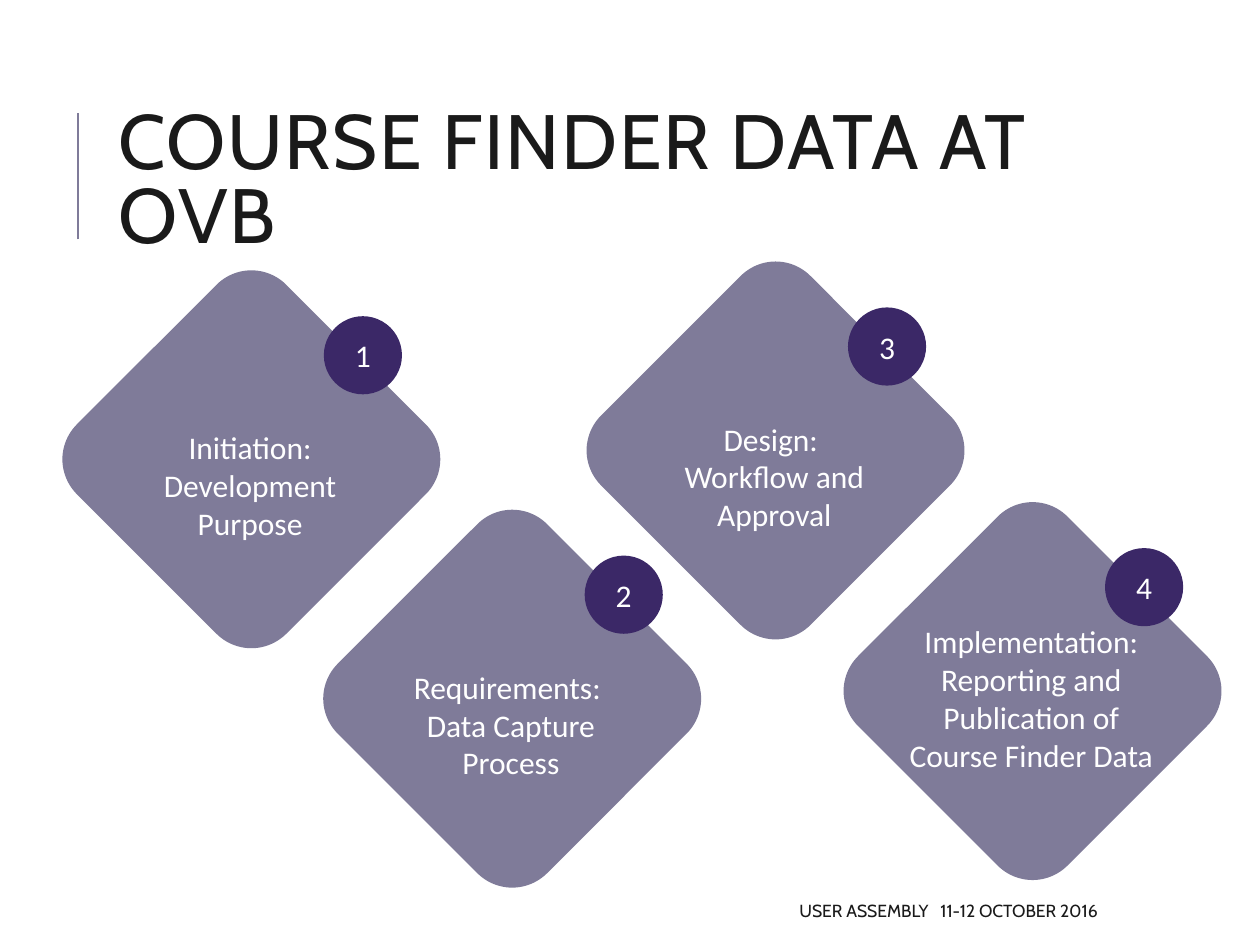
import pptx
import pptx.dml.color
import pptx.enum.shapes
import pptx.enum.text
import pptx.oxml.ns
import pptx.util
from lxml import etree

Inches = pptx.util.Inches
Pt = pptx.util.Pt
RGBColor = pptx.dml.color.RGBColor
ALIGN = pptx.enum.text.PP_ALIGN
ANCHOR = pptx.enum.text.MSO_ANCHOR
SHAPE = pptx.enum.shapes.MSO_SHAPE

GREY_PURPLE = RGBColor(0x7F, 0x7B, 0x99)
DARK_PURPLE = RGBColor(0x3B, 0x28, 0x67)
WHITE = RGBColor(0xFF, 0xFF, 0xFF)
INK = RGBColor(0x1A, 0x1A, 0x1A)

DIAMOND_SIDE = 2.35
BADGE_SIZE = 0.62
LABEL_INSET = 0.05
LABEL_LINE = 0.3

# Left and top of each unrotated diamond, then the label paragraphs
STEPS = [
    (0.82, 2.47, ["Initiation:", "Development Purpose"]),
    (2.89, 4.37, ["Requirements: ", "Data Capture Process"]),
    (4.98, 2.40, ["Design: ", "Workflow and Approval"]),
    (7.02, 4.31, ["Implementation: Reporting and Publication of Course Finder Data"]),
]


def add_run(paragraph, text, font, size, color, spacing=0):
    """Add a run; spacing is the extra space after each character, in points."""
    run = paragraph.add_run()
    run.text = text
    run.font.name = font
    run.font.size = Pt(size)
    run.font.color.rgb = color
    if spacing:
        run.font._element.set("spc", str(round(spacing * 100)))


def add_text_box(slide, left, top, width, height, anchor):
    box = slide.shapes.add_textbox(Inches(left), Inches(top), Inches(width), Inches(height))
    box.text_frame.word_wrap = True
    box.text_frame.vertical_anchor = anchor
    return box.text_frame


def add_filled_shape(slide, kind, left, top, size, color):
    shape = slide.shapes.add_shape(kind, Inches(left), Inches(top), Inches(size), Inches(size))
    shape.shadow.inherit = False
    shape.fill.solid()
    shape.fill.fore_color.rgb = color
    shape.line.fill.background()
    return shape


def add_title(slide, left, top, width, height):
    rule = slide.shapes.add_connector(
        pptx.enum.shapes.MSO_CONNECTOR.STRAIGHT,
        Inches(left - 0.22), Inches(top + 1.26), Inches(left - 0.22), Inches(top + 0.26))
    rule.line.color.rgb = GREY_PURPLE
    rule.line.width = Pt(1.5)
    etree.SubElement(rule._element.spPr, pptx.oxml.ns.qn("a:effectLst"))

    frame = add_text_box(slide, left, top, width, height, ANCHOR.MIDDLE)
    paragraph = frame.paragraphs[0]
    paragraph.line_spacing = 0.8
    add_run(paragraph, "COURSE FINDER DATA AT OVB", "Cabin", 44, INK, spacing=1)


def add_step(slide, left, top, number, lines):
    diamond = add_filled_shape(
        slide, SHAPE.ROUNDED_RECTANGLE, left, top, DIAMOND_SIDE, GREY_PURPLE)
    diamond.rotation = 45

    badge = add_filled_shape(
        slide, SHAPE.OVAL, left + 1.75, top + 0.04, BADGE_SIZE, DARK_PURPLE)
    badge.text_frame.vertical_anchor = ANCHOR.MIDDLE
    paragraph = badge.text_frame.paragraphs[0]
    paragraph.alignment = ALIGN.CENTER
    add_run(paragraph, str(number), "Calibri", 18, WHITE)

    frame = add_text_box(slide, left + 0.04, top + 0.58, 2.25, 1.31, ANCHOR.TOP)
    # A heading with its own paragraph starts one line lower
    frame.margin_top = Inches(LABEL_INSET + LABEL_LINE * (len(lines) - 1))
    for index, line in enumerate(lines):
        paragraph = frame.add_paragraph() if index else frame.paragraphs[0]
        paragraph.alignment = ALIGN.CENTER
        add_run(paragraph, line, "Calibri", 18, WHITE)


def add_footer(slide, left, top, width, height):
    frame = add_text_box(slide, left, top, width, height, ANCHOR.MIDDLE)
    paragraph = frame.paragraphs[0]
    paragraph.alignment = ALIGN.RIGHT
    add_run(paragraph, "USER ASSEMBLY", "Cabin", 10, INK)
    add_run(paragraph, " ", "Cabin", 10, INK, spacing=4.6)
    add_run(paragraph, "11-12 OCTOBER 2016", "Cabin", 10, INK)


def main():
    presentation = pptx.Presentation()
    presentation.slide_width = Inches(10)
    presentation.slide_height = Inches(7.5)
    slide = presentation.slides.add_slide(presentation.slide_layouts[6])

    add_title(slide, 0.84, 0.64, 7.97, 1.64)
    for number, (left, top, lines) in enumerate(STEPS, start=1):
        add_step(slide, left, top, number, lines)
    add_footer(slide, 3.97, 7.08, 4.84, 0.3)

    presentation.save("out.pptx")


if __name__ == "__main__":
    main()
